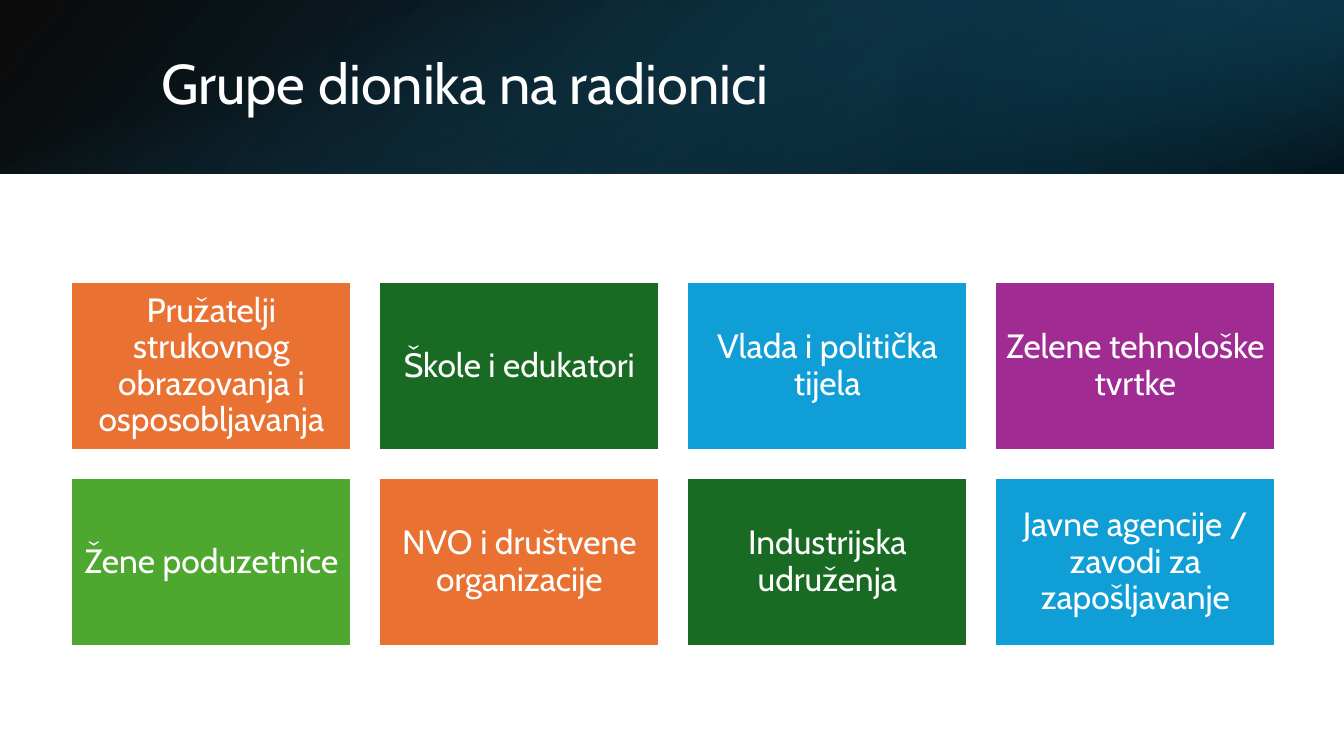
import dataclasses

import lxml.etree
import pptx
import pptx.dml.color
import pptx.enum.shapes
import pptx.enum.text
import pptx.oxml.ns
import pptx.util

Pt = pptx.util.Pt
RGBColor = pptx.dml.color.RGBColor
qn = pptx.oxml.ns.qn


@dataclasses.dataclass(frozen=True)
class Theme:
    font: str = "Cabin"
    title_size: int = 40
    tile_size: int = 24
    white: str = "FFFFFF"
    black: str = "000000"
    teal: str = "156082"
    dark_teal: str = "104862"
    deep_teal: str = "0B3041"
    orange: str = "E97132"
    dark_green: str = "196B24"
    blue: str = "0F9ED5"
    purple: str = "A02B93"
    green: str = "4EA72E"


class SlideBuilder:
    def __init__(self, presentation, theme):
        self.theme = theme
        self.slide = presentation.slides.add_slide(presentation.slide_layouts[5])

    def rectangle(self, left, top, width, height):
        shape = self.slide.shapes.add_shape(
            pptx.enum.shapes.MSO_SHAPE.RECTANGLE, Pt(left), Pt(top), Pt(width), Pt(height)
        )
        shape.shadow.inherit = False
        return shape

    def gradient_band(self, box, stops, angle, rotation=0, flipped=False):
        shape = self.rectangle(*box)
        shape.rotation = rotation
        if flipped:
            shape._element.spPr.xfrm.set("flipH", "1")
        shape.line.fill.background()
        shape.fill.gradient()
        shape.fill.gradient_angle = 360 - angle
        for stop, (position, color, opacity) in zip(shape.fill.gradient_stops, stops):
            stop.position = position
            stop.color.rgb = RGBColor.from_string(color)
        colors = shape._element.spPr.iter(qn("a:srgbClr"))
        for color_element, (position, color, opacity) in zip(colors, stops):
            alpha = lxml.etree.SubElement(color_element, qn("a:alpha"))
            alpha.set("val", str(opacity * 1000))

    def set_text(self, shape, text, size, alignment):
        frame = shape.text_frame
        frame.text = text
        frame.word_wrap = True
        frame.auto_size = pptx.enum.text.MSO_AUTO_SIZE.NONE
        frame.vertical_anchor = pptx.enum.text.MSO_ANCHOR.MIDDLE
        paragraph = frame.paragraphs[0]
        paragraph.alignment = alignment
        paragraph.line_spacing = 0.9
        font = paragraph.runs[0].font
        font.name = self.theme.font
        font.size = Pt(size)
        font.color.rgb = RGBColor.from_string(self.theme.white)

    def title(self, text, left, top, width, height):
        title = self.slide.shapes.title
        title.left, title.top, title.width, title.height = map(Pt, (left, top, width, height))
        self.set_text(title, text, self.theme.title_size, pptx.enum.text.PP_ALIGN.LEFT)
        self.slide.shapes._spTree.append(title._element)

    def tile(self, text, color, left, top, width, height):
        shape = self.rectangle(left, top, width, height)
        shape.fill.solid()
        shape.fill.fore_color.rgb = RGBColor.from_string(color)
        shape.line.color.rgb = RGBColor.from_string(self.theme.white)
        shape.line.width = Pt(1.5)
        frame = shape.text_frame
        frame.margin_left = frame.margin_right = Pt(7)
        frame.margin_top = frame.margin_bottom = Pt(7)
        self.set_text(shape, text, self.theme.tile_size, pptx.enum.text.PP_ALIGN.CENTER)


def main():
    slide_width, slide_height, band_height = 960, 540, 124
    presentation = pptx.Presentation()
    presentation.slide_width = Pt(slide_width)
    presentation.slide_height = Pt(slide_height)
    theme = Theme()
    builder = SlideBuilder(presentation, theme)

    builder.gradient_band(
        (0, 0, slide_width, band_height),
        [(0, theme.black, 96), (1, theme.dark_teal, 100)],
        angle=140,
        flipped=True,
    )
    builder.gradient_band(
        (640, 0, slide_width - 640, band_height),
        [(0.19, theme.deep_teal, 68), (1, theme.teal, 79)],
        angle=320,
        rotation=180,
        flipped=True,
    )
    offset = (slide_width - band_height) / 2
    builder.gradient_band(
        (offset, -offset, band_height, slide_width),
        [(0.23, theme.teal, 0), (0.99, theme.black, 74)],
        angle=340,
        rotation=90,
    )
    builder.title("Grupe dionika na radionici", 108, 27.5, 790.5, 69)

    groups = [
        ("Pružatelji strukovnog obrazovanja i osposobljavanja", theme.orange),
        ("Škole i edukatori", theme.dark_green),
        ("Vlada i politička tijela", theme.blue),
        ("Zelene tehnološke tvrtke", theme.purple),
        ("Žene poduzetnice", theme.green),
        ("NVO i društvene organizacije", theme.orange),
        ("Industrijska udruženja", theme.dark_green),
        ("Javne agencije / zavodi za zapošljavanje", theme.blue),
    ]
    columns, tile_width, tile_height, gap = 4, 200, 120, 20
    for index, (text, color) in enumerate(groups):
        row, column = divmod(index, columns)
        left = 51 + column * (tile_width + gap)
        top = 201.5 + row * (tile_height + gap)
        builder.tile(text, color, left, top, tile_width, tile_height)

    presentation.save("out.pptx")


if __name__ == "__main__":
    main()
